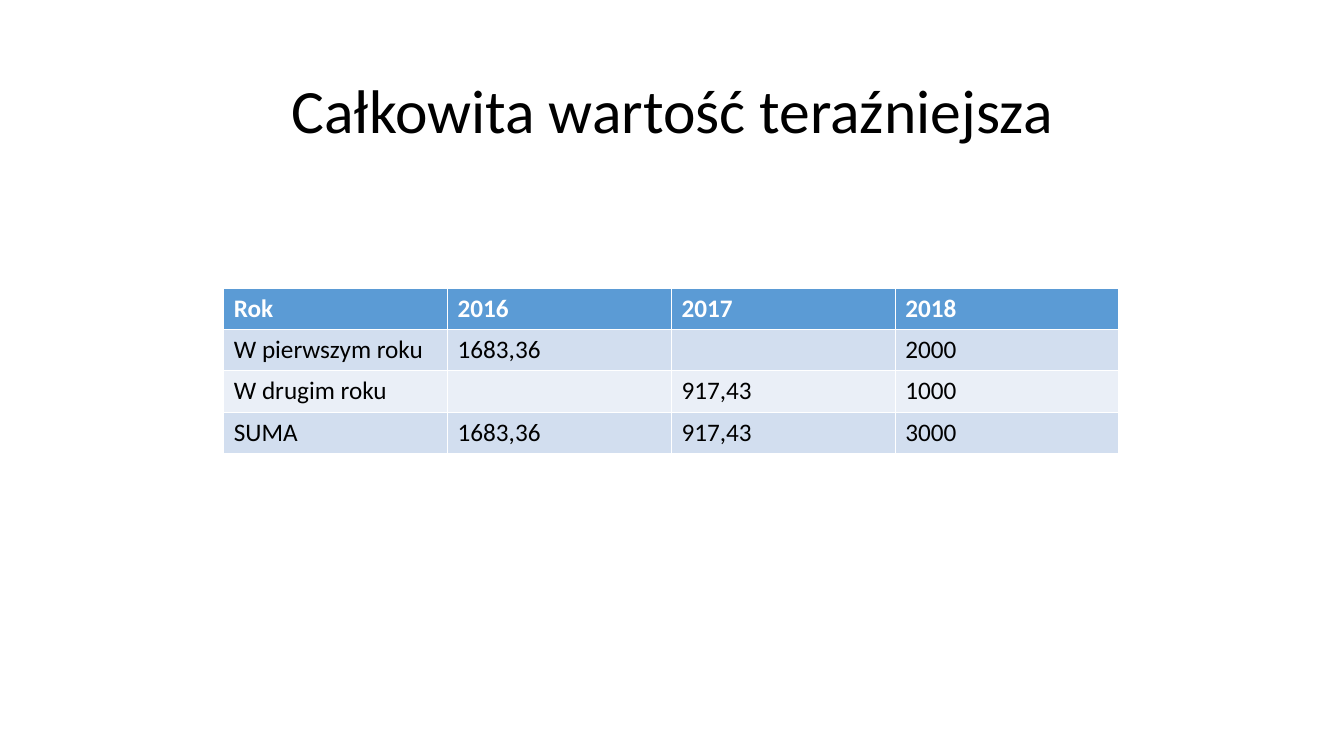
from dataclasses import dataclass

from pptx import Presentation
from pptx.dml.color import RGBColor
from pptx.enum.text import MSO_ANCHOR, PP_ALIGN
from pptx.text.text import TextFrame
from pptx.util import Inches, Pt

FONT = "Calibri"
COL_W, ROW_H = 2.22, 0.41


@dataclass
class Row:
    values: list[str]
    fill: str
    color: str = "000000"
    bold: bool = False


ROWS = [
    Row(["Rok", "2016", "2017", "2018"], "5B9BD5", "FFFFFF", True),
    Row(["W pierwszym roku", "1683,36", "", "2000"], "D2DEEF"),
    Row(["W drugim roku", "", "917,43", "1000"], "EAEFF7"),
    Row(["SUMA", "1683,36", "917,43", "3000"], "D2DEEF"),
]


def rgb(value: str) -> RGBColor:
    return RGBColor.from_string(value)


def put_text(tf: TextFrame, text: str, *, size: float, color: str = "000000",
             bold: bool = False, align: PP_ALIGN = PP_ALIGN.LEFT,
             spacing: float = 1.0) -> None:
    p = tf.paragraphs[0]
    p.alignment = align
    p.line_spacing = spacing
    p.font.size = Pt(size)
    if text:
        r = p.add_run()
        r.text = text
        r.font.name = FONT
        r.font.size = Pt(size)
        r.font.bold = bold
        r.font.color.rgb = rgb(color)


def add_title(s, text: str) -> None:
    title = s.shapes.title
    title.left, title.top = Inches(0.92), Inches(0.4)
    title.width, title.height = Inches(11.5), Inches(1.45)
    title.text_frame.vertical_anchor = MSO_ANCHOR.MIDDLE
    put_text(title.text_frame, text, size=44, align=PP_ALIGN.CENTER, spacing=0.9)


def add_value_table(s, rows: list[Row]) -> None:
    """Add the table; its default style supplies the white borders."""
    n_cols = len(rows[0].values)
    table = s.shapes.add_table(
        len(rows), n_cols, Inches(2.22), Inches(2.86),
        Inches(COL_W * n_cols), Inches(ROW_H * len(rows))).table
    for col in table.columns:
        col.width = Inches(COL_W)
    for i, row in enumerate(rows):
        table.rows[i].height = Inches(ROW_H)
        for j, value in enumerate(row.values):
            cell = table.cell(i, j)
            cell.fill.solid()
            cell.fill.fore_color.rgb = rgb(row.fill)
            put_text(cell.text_frame, value, size=18, color=row.color, bold=row.bold)


def main() -> None:
    prs = Presentation()
    prs.slide_width, prs.slide_height = Inches(13.33), Inches(7.5)
    s = prs.slides.add_slide(prs.slide_layouts[5])
    add_title(s, "Całkowita wartość teraźniejsza")
    add_value_table(s, ROWS)
    prs.save("out.pptx")


if __name__ == "__main__":
    main()
